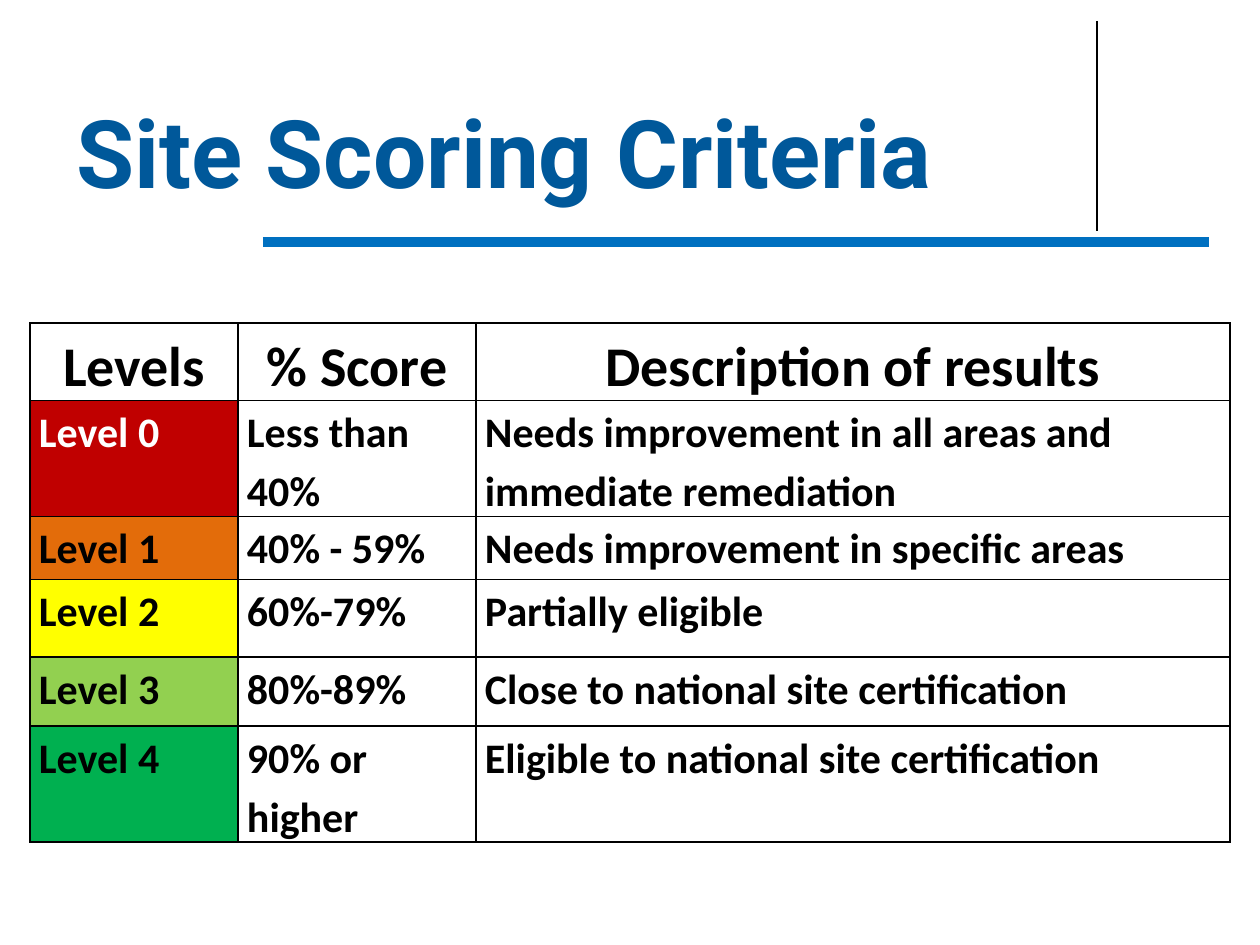
from lxml import etree
from pptx import Presentation, util as u
from pptx.dml.color import RGBColor
from pptx.enum import shapes, text
from pptx.oxml.ns import qn

SCALE = 914400 / 126  # EMU per px
COLORS = {
    "black": "000000", "white": "FFFFFF", "title": "00589A", "rule": "0070C0",
    "red": "C00000", "orange": "E36C0A", "yellow": "FFFF00",
    "lime": "92D050", "green": "00B050",
}
HEADER = ("Levels", "% Score", "Description of results")
LEVELS = [  # score, description, level fill, row height
    ("Less than 40%", "Needs improvement in all areas and immediate remediation", "red", 105),
    ("40% - 59%", "Needs improvement in specific areas", "orange", 63),
    ("60%-79%", "Partially eligible", "yellow", 78),
    ("80%-89%", "Close to national site certification", "lime", 69),
    ("90% or higher", "Eligible to national site certification", "green", 105),
]


def px(n):
    return u.Emu(round(n * SCALE))


def rgb(name):
    return RGBColor.from_string(COLORS[name])


def write(tf, content, size, font="Calibri", color="black", align=None, spacing=None, after=None):
    p = tf.paragraphs[0]
    p.alignment, p.line_spacing = align, spacing
    if after is not None:
        p.space_after = u.Pt(after)
    r = p.add_run()
    r.text = content
    r.font.size, r.font.name, r.font.bold = u.Pt(size), font, True
    r.font.color.rgb = rgb(color)


class Deck:
    def __init__(self, prs):
        self.s = prs.slides.add_slide(prs.slide_layouts[6])

    def line(self, x1, y1, x2, y2, color, width):
        c = self.s.shapes.add_connector(
            shapes.MSO_CONNECTOR.STRAIGHT, px(x1), px(y1), px(x2), px(y2))
        c.line.color.rgb, c.line.width = rgb(color), u.Pt(width)
        etree.SubElement(c._element.spPr, qn("a:effectLst"))

    def title(self, x, y, w, h, content):
        tf = self.s.shapes.add_textbox(px(x), px(y), px(w), px(h)).text_frame
        tf.word_wrap, tf.vertical_anchor = True, text.MSO_ANCHOR.BOTTOM
        write(tf, content, 54, font="Roboto", color="title")

    def table(self, x, y, cols, rows):
        sp = self.s.shapes.add_table(
            len(rows), len(cols), px(x), px(y), px(sum(cols)), px(sum(rows)))
        table = sp.table
        table.first_row = table.horz_banding = False
        for col, w in zip(table.columns, cols):
            col.width = px(w)
        for row, h in zip(table.rows, rows):
            row.height = px(h)
        return table

    def cell(self, cell, content, size=24, color="black", fill=None, align=None,
             anchor=text.MSO_ANCHOR.TOP):
        cell.margin_left = cell.margin_right = px(9)
        cell.margin_top = cell.margin_bottom = 0
        cell.vertical_anchor = anchor
        self.borders(cell)
        if fill:
            cell.fill.solid()
            cell.fill.fore_color.rgb = rgb(fill)
        else:
            cell.fill.background()
        write(cell.text_frame, content, size, color=color, align=align, spacing=1.15, after=10)

    def borders(self, cell):
        tc_pr = cell._tc.get_or_add_tcPr()
        for side in ("lnL", "lnR", "lnT", "lnB"):
            ln = etree.SubElement(tc_pr, qn(f"a:{side}"), w=str(u.Pt(1)))
            solid = etree.SubElement(ln, qn("a:solidFill"))
            etree.SubElement(solid, qn("a:srgbClr"), val=COLORS["black"])


def main():
    prs = Presentation()
    prs.slide_width, prs.slide_height = px(1260), px(945)
    deck = Deck(prs)

    # Title and rules
    deck.line(1097, 21, 1097, 231, "black", 0.75)
    deck.title(64, 96, 1040, 118, "Site Scoring Criteria")

    # Scoring table
    table = deck.table(30, 323, (208, 238, 754), [67] + [level[3] for level in LEVELS])
    for col, label in enumerate(HEADER):
        deck.cell(table.cell(0, col), label, size=32, align=text.PP_ALIGN.CENTER,
                  anchor=text.MSO_ANCHOR.MIDDLE)
    for i, (score, description, fill, _) in enumerate(LEVELS):
        deck.cell(table.cell(i + 1, 0), f"Level {i}", fill=fill,
                  color="white" if i == 0 else "black")
        deck.cell(table.cell(i + 1, 1), score)
        deck.cell(table.cell(i + 1, 2), description)

    # Underline of the title
    deck.line(263, 242, 1209, 242, "rule", 6)
    prs.save("out.pptx")


if __name__ == "__main__":
    main()
